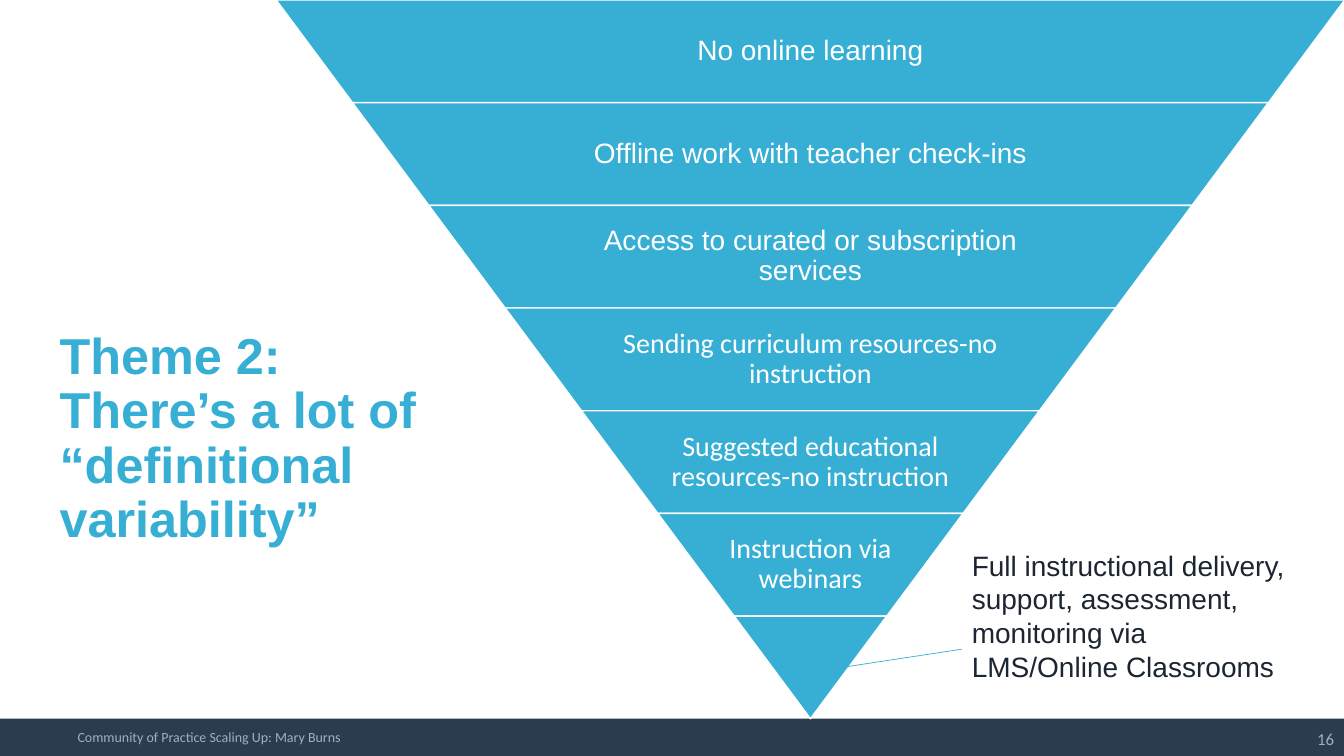
from dataclasses import dataclass

from lxml.etree import SubElement
from pptx import Presentation
from pptx.dml.color import RGBColor
from pptx.enum.shapes import MSO_CONNECTOR, MSO_SHAPE
from pptx.enum.text import MSO_ANCHOR, MSO_AUTO_SIZE, PP_ALIGN
from pptx.oxml.ns import qn
from pptx.util import Inches, Pt

COLORS = {
    "accent": "37AFD5",
    "bar": "2A3C4E",
    "muted": "9AB1C8",
    "ink": "1C2532",
    "white": "FFFFFF",
}
WIDTH, HEIGHT = Inches(13.33), Inches(7.5)
GRID = 100
FOOTER_TOP = 95.07
PYRAMID_CENTER, PYRAMID_WIDTH = 60.3, 79.5
LABEL_SHARE = 0.65


@dataclass(frozen=True)
class Area:
    left: float
    top: float
    width: float
    height: float

    def lengths(self) -> tuple[int, int, int, int]:
        return (columns(self.left), rows(self.top),
                columns(self.width), rows(self.height))


@dataclass(frozen=True)
class Tier:
    label: str
    font: str = "Arial"


TIERS = [
    Tier("No online learning"),
    Tier("Offline work with teacher check-ins"),
    Tier("Access to curated or subscription services"),
    Tier("Sending curriculum resources-no instruction", "Calibri"),
    Tier("Suggested educational resources-no instruction", "Calibri"),
    Tier("Instruction via webinars", "Calibri"),
    Tier(""),
]


def columns(count: float) -> int:
    return round(WIDTH * count / GRID)


def rows(count: float) -> int:
    return round(HEIGHT * count / GRID)


def color(name: str) -> RGBColor:
    return RGBColor.from_string(COLORS[name])


def write(box, text: str, *, size: float, ink: str, font: str = "Arial",
          bold: bool = False, align=PP_ALIGN.LEFT, anchor=MSO_ANCHOR.TOP,
          spacing: float = 1.0, inset: float | None = None,
          fit=MSO_AUTO_SIZE.NONE) -> None:
    frame = box.text_frame
    frame.word_wrap = True
    frame.auto_size = fit
    frame.vertical_anchor = anchor
    if inset is not None:
        frame.margin_left = frame.margin_right = Inches(inset)
        frame.margin_top = frame.margin_bottom = Inches(inset)
    para = frame.paragraphs[0]
    para.alignment = align
    para.line_spacing = spacing
    span = para.add_run()
    span.text = text
    span.font.name = font
    span.font.size = Pt(size)
    span.font.bold = bold
    span.font.color.rgb = color(ink)


def add_text(shapes, area: Area, text: str, **style) -> None:
    write(shapes.add_textbox(*area.lengths()), text, **style)


def add_block(shapes, kind: MSO_SHAPE, area: Area, fill: str):
    block = shapes.add_shape(kind, *area.lengths())
    block.shadow.inherit = False
    block.fill.solid()
    block.fill.fore_color.rgb = color(fill)
    block.line.fill.background()
    return block


def add_pyramid(page) -> None:
    group = page.shapes.add_group_shape()
    tier_height = FOOTER_TOP / len(TIERS)
    side_inset = columns(PYRAMID_WIDTH / len(TIERS) / 2) / rows(tier_height)
    for index, tier in enumerate(TIERS):
        width = PYRAMID_WIDTH * (len(TIERS) - index) / len(TIERS)
        top = index * tier_height
        band = add_block(group.shapes, MSO_SHAPE.TRAPEZOID,
                         Area(PYRAMID_CENTER - width / 2, top, width, tier_height),
                         "accent")
        band.adjustments[0] = side_inset
        band.rotation = 180
        band.line.color.rgb = color("white")
        band.line.width = Pt(1)
        if tier.label:
            label_width = width * LABEL_SHARE
            add_text(group.shapes,
                     Area(PYRAMID_CENTER - label_width / 2, top,
                          label_width, tier_height),
                     tier.label, size=20, ink="white", font=tier.font,
                     align=PP_ALIGN.CENTER, anchor=MSO_ANCHOR.MIDDLE,
                     spacing=0.9, inset=0.03)


def add_title(page) -> None:
    title = page.shapes.title
    title.left, title.top, title.width, title.height = Area(
        3.68, 43.07, 29.41, 20.13).lengths()
    write(title, "Theme 2: There’s a lot of “definitional variability”",
          size=36, ink="accent", bold=True, spacing=0.9)


def add_callout(page) -> None:
    add_text(page.shapes, Area(71.57, 71.87, 25.36, 19.33),
             "Full instructional delivery, support, assessment, "
             "monitoring via LMS/Online Classrooms",
             size=20, ink="ink", fit=MSO_AUTO_SIZE.SHAPE_TO_FIT_TEXT)
    leader = page.shapes.add_connector(
        MSO_CONNECTOR.STRAIGHT,
        columns(71.57), rows(85.87), columns(59.26), rows(89.2))
    leader.line.color.rgb = color("accent")
    leader.line.width = Pt(0.5)
    SubElement(leader._element.spPr, qn("a:effectLst"))


def add_footer(page) -> None:
    add_block(page.shapes, MSO_SHAPE.RECTANGLE,
              Area(0, FOOTER_TOP, GRID, GRID - FOOTER_TOP), "bar")
    add_text(page.shapes, Area(5.03, FOOTER_TOP, 50.49, GRID - FOOTER_TOP),
             "Community of Practice Scaling Up: Mary Burns",
             size=10, ink="muted", font="Calibri", anchor=MSO_ANCHOR.MIDDLE)
    add_text(page.shapes, Area(77.5, FOOTER_TOP, 22.5, 5.33), "16",
             size=12, ink="muted", font="Calibri",
             align=PP_ALIGN.RIGHT, anchor=MSO_ANCHOR.MIDDLE)


def main() -> None:
    deck = Presentation()
    deck.slide_width, deck.slide_height = WIDTH, HEIGHT
    page = deck.slides.add_slide(deck.slide_layouts.get_by_name("Title Only"))
    add_footer(page)
    add_title(page)
    add_pyramid(page)
    add_callout(page)
    deck.save("out.pptx")


if __name__ == "__main__":
    main()
